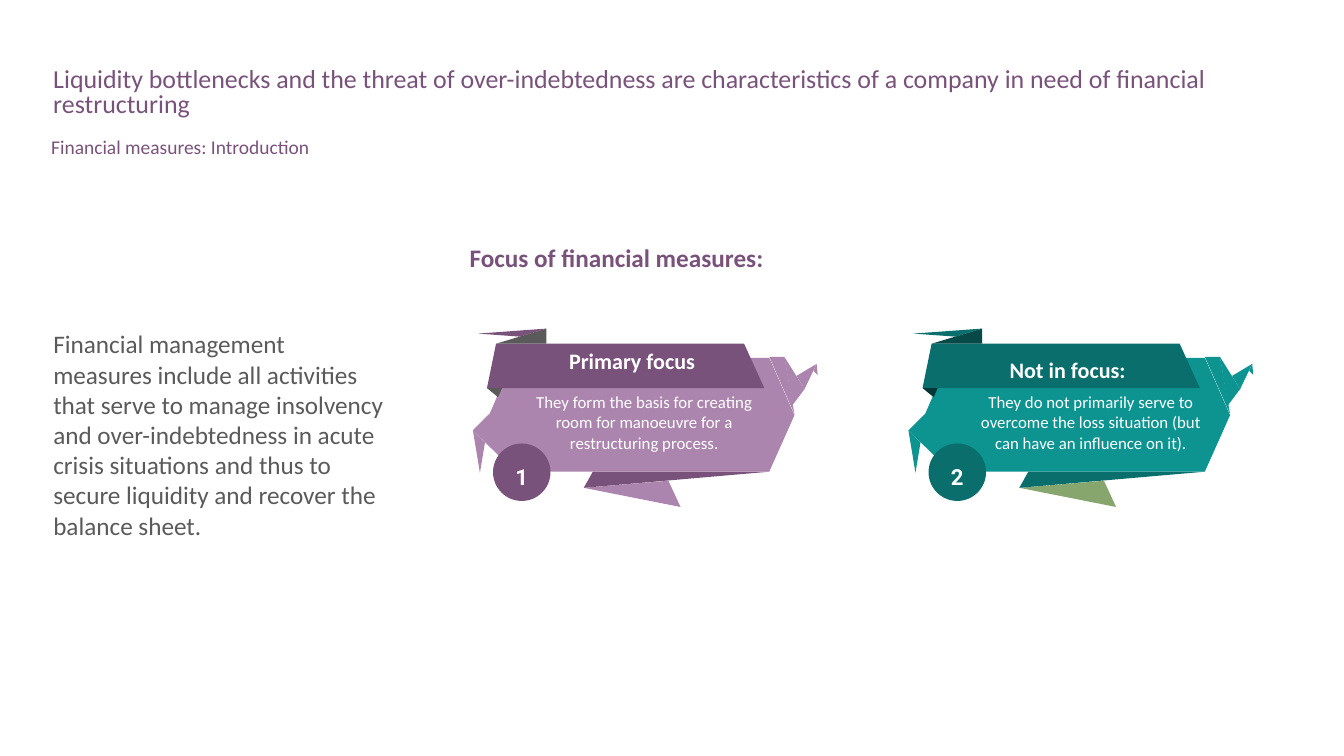
"""Build a slide that sets out the focus of financial measures on two ribbons."""
from pptx import Presentation
from pptx.dml.color import RGBColor
from pptx.enum.shapes import MSO_SHAPE
from pptx.enum.text import MSO_ANCHOR, PP_ALIGN
from pptx.util import Inches, Pt

OVAL = MSO_SHAPE.OVAL
TOP, MIDDLE = MSO_ANCHOR.TOP, MSO_ANCHOR.MIDDLE
LEFT, CENTER = PP_ALIGN.LEFT, PP_ALIGN.CENTER

WHITE = RGBColor(0xFF, 0xFF, 0xFF)
GRAY = RGBColor(0x59, 0x5A, 0x59)
PURPLE = RGBColor(0x79, 0x52, 0x7B)
LILAC = RGBColor(0xAB, 0x85, 0xAD)
TEAL = RGBColor(0x0D, 0x93, 0x90)
DARK_TEAL = RGBColor(0x09, 0x6E, 0x6C)
DEEP_TEAL = RGBColor(0x06, 0x49, 0x47)
NIGHT_TEAL = RGBColor(0x03, 0x36, 0x37)
GREEN = RGBColor(0x87, 0xA6, 0x6E)

RIBBON_TOP = 3.26
TAIL_TIP = [(1.94, 1.51), (2.06, 1.77), (1.1, 1.58)]
TAIL_FOLD = [(2.94, 1.42), (1.19, 1.42), (1.1, 1.58)]
BODY_PARTS = [
    [(0.41, 1.42), (0.16, 0.86), (0.41, 0.29), (2.94, 0.29), (3.19, 0.86), (2.94, 1.42)],
    [(3.19, 0.85), (2.94, 0.28), (3.09, 0.28)],
    [(3.17, 0.76), (3.29, 0.6), (3.09, 0.28)],
    [(3.29, 0.6), (3.41, 0.35), (3.21, 0.47)],
    [(3.41, 0.35), (3.42, 0.46), (3.38, 0.42)],
    [(0.16, 0.85), (0.41, 1.41), (0, 1.01)],
    [(0, 1.01), (0.07, 1.43), (0.12, 1.13)],
]
BANNER = [(2.89, 0.59), (0.14, 0.59), (0.23, 0.15), (2.69, 0.15)]
BANNER_SHADE = [(0.14, 0.59), (0.25, 0.68), (0.29, 0.59)]
TOP_FOLD = [(0.73, 0.15), (0.73, 0), (0.23, 0.15)]
TOP_TIP = [(0.73, 0), (0.05, 0.05), (0.47, 0.08)]


def write(frame, text, size, color, font="Calibri", bold=False, align=LEFT,
          anchor=TOP, spacing=None):
    """Put one formatted paragraph into a text frame."""
    frame.word_wrap = True
    frame.vertical_anchor = anchor
    paragraph = frame.paragraphs[0]
    paragraph.alignment = align
    paragraph.line_spacing = spacing
    run = paragraph.add_run()
    run.text = text
    run.font.name = font
    run.font.size = Pt(size)
    run.font.bold = bold
    run.font.color.rgb = color


class RibbonSlide:
    """Hold the current slide and draw its elements in one style."""

    def __init__(self, slide):
        self.shapes = slide.shapes

    def paint(self, shape, color):
        """Give a shape a flat fill without outline or shadow."""
        shape.shadow.inherit = False
        shape.fill.solid()
        shape.fill.fore_color.rgb = color
        shape.line.fill.background()

    def text(self, left, top, width, height, text, size, color, **style):
        """Add a text box."""
        box = self.shapes.add_textbox(*map(Inches, (left, top, width, height)))
        write(box.text_frame, text, size, color, **style)

    def polygon(self, shapes, left, points, color):
        """Add a closed outline whose points are relative to its ribbon."""
        start, *others = [(Inches(left + x), Inches(RIBBON_TOP + y)) for x, y in points]
        builder = shapes.build_freeform(*start)
        builder.add_line_segments(others, close=True)
        self.paint(builder.convert_to_shape(), color)

    def badge(self, left, top, size, number, color):
        """Add a numbered circle."""
        circle = self.shapes.add_shape(OVAL, *map(Inches, (left, top, size, size)))
        self.paint(circle, color)
        frame = circle.text_frame
        frame.margin_top, frame.margin_bottom = Inches(0.08), 0
        write(frame, number, 15.8, WHITE, font="Roboto", bold=True,
              align=CENTER, anchor=MIDDLE)

    def ribbon(self, left, number, light, dark, tip, shade, fold):
        """Add a folded ribbon with its numbered circle."""
        self.polygon(self.shapes, left, TAIL_TIP, tip)
        self.polygon(self.shapes, left, TAIL_FOLD, dark)
        body = self.shapes.add_group_shape()
        for points in BODY_PARTS:
            self.polygon(body.shapes, left, points, light)
        for points, color in ((BANNER, dark), (BANNER_SHADE, shade),
                              (TOP_FOLD, fold), (TOP_TIP, dark)):
            self.polygon(self.shapes, left, points, color)
        self.badge(left + 0.2, RIBBON_TOP + 1.14, 0.57, number, dark)


def main():
    """Create the slide and save it."""
    presentation = Presentation()
    presentation.slide_width = Inches(13.33)
    presentation.slide_height = Inches(7.5)
    page = RibbonSlide(presentation.slides.add_slide(presentation.slide_layouts[6]))

    page.text(0.43, 0.63, 12.54, 0.64,
              "Liquidity bottlenecks and the threat of over-indebtedness are "
              "characteristics of a company in need of financial restructuring",
              18.5, PURPLE, spacing=0.8)
    page.text(0.41, 1.35, 12.56, 0.28, "Financial measures: Introduction",
              13.9, PURPLE, spacing=0.7)
    page.text(0.43, 1.79, 3.49, 5.04,
              "Financial management measures include all activities that serve to "
              "manage insolvency and over-indebtedness in acute crisis situations "
              "and thus to secure liquidity and recover the balance sheet.",
              18, GRAY, anchor=MIDDLE)
    page.text(4.56, 2.36, 6.67, 0.4, "Focus of financial measures:",
              18, PURPLE, bold=True)

    page.ribbon(4.69, "1", LILAC, PURPLE, tip=LILAC, shade=GRAY, fold=GRAY)
    page.ribbon(9.01, "2", TEAL, DARK_TEAL, tip=GREEN, shade=NIGHT_TEAL, fold=DEEP_TEAL)

    page.text(5.36, 3.4, 1.82, 0.37, "Primary focus", 15.8, WHITE,
              bold=True, align=CENTER)
    page.text(9.77, 3.49, 1.64, 0.37, "Not in focus:", 15.8, WHITE,
              bold=True, align=CENTER)
    page.text(5.12, 3.84, 2.54, 0.71,
              "They form the basis for creating room for manoeuvre for a "
              "restructuring process.", 12, WHITE, align=CENTER)
    page.text(9.55, 3.84, 2.54, 0.71,
              "They do not primarily serve to overcome the loss situation "
              "(but can have an influence on it).", 12, WHITE, align=CENTER)
    presentation.save("out.pptx")


if __name__ == "__main__":
    main()
